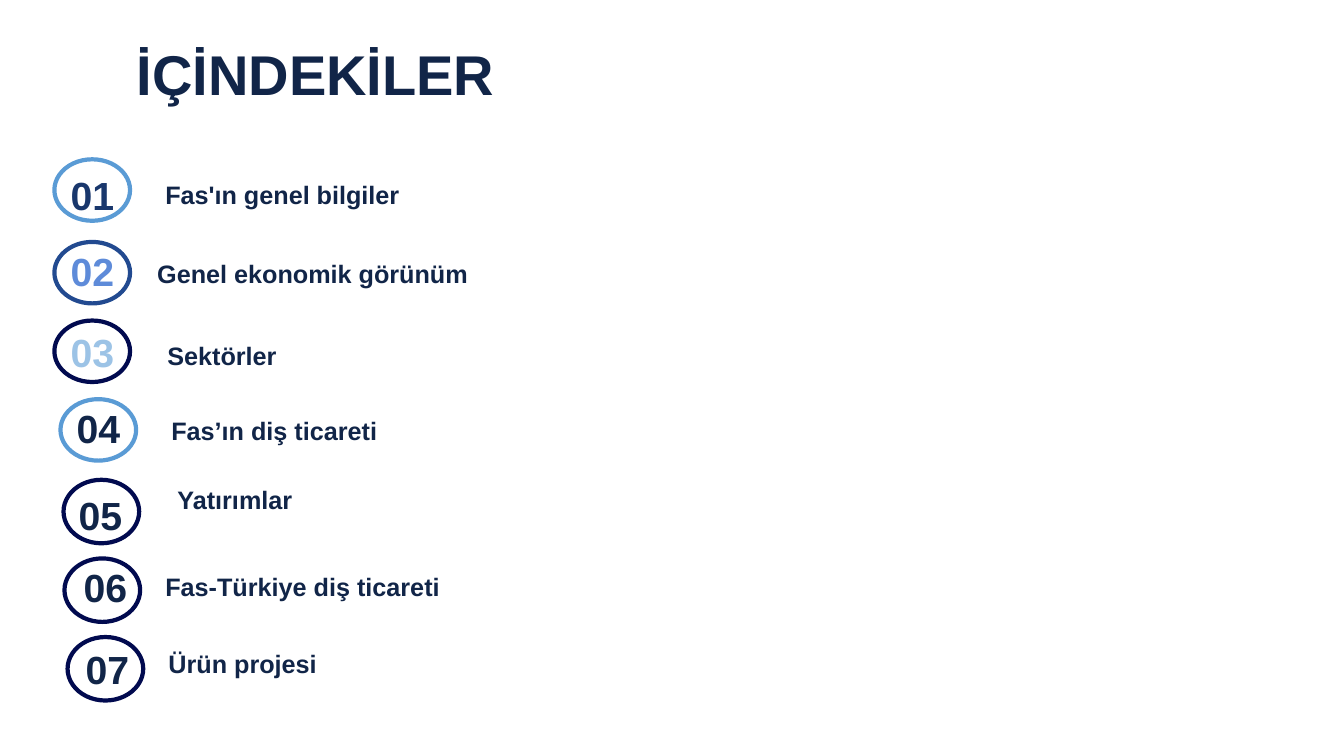
from dataclasses import dataclass

import pptx
import pptx.dml.color
import pptx.enum.shapes
import pptx.enum.text
import pptx.util

SLIDE_WIDTH = pptx.util.Inches(13.33)
SLIDE_HEIGHT = pptx.util.Inches(7.5)
FONT = "Arial"
NAVY = "112548"
SKY = "5A9BD5"
MIDNIGHT = "010A4F"
LEFT = pptx.enum.text.PP_ALIGN.LEFT
CENTER = pptx.enum.text.PP_ALIGN.CENTER
TOP = pptx.enum.text.MSO_ANCHOR.TOP
MIDDLE = pptx.enum.text.MSO_ANCHOR.MIDDLE


@dataclass(frozen=True)
class Area:
    """Left, top, width and height in percent of the slide."""
    left: float
    top: float
    width: float
    height: float

    def lengths(self) -> tuple[int, int, int, int]:
        return (
            int(SLIDE_WIDTH * self.left / 100),
            int(SLIDE_HEIGHT * self.top / 100),
            int(SLIDE_WIDTH * self.width / 100),
            int(SLIDE_HEIGHT * self.height / 100),
        )


@dataclass(frozen=True)
class Topic:
    title: str
    ring_at: tuple[float, float]
    number_at: tuple[float, float]
    title_at: tuple[float, float]
    ring_color: str = MIDNIGHT
    number_color: str = NAVY
    ring_height: float = 8.4
    number_height: float = 7.6
    title_width: float = 36.31


TOPICS = [
    Topic("Fas'ın genel bilgiler", (4.05, 21.07), (2.93, 22), (11.4, 23.07),
          SKY, "19376C", 8.13, 6.27),
    Topic("Genel ekonomik görünüm", (4.05, 32), (2.93, 32), (10.8, 33.47),
          "224A90", "5E8BD9", 8.13, 6.27),
    Topic("Sektörler", (4.05, 42.4), (2.93, 42.8), (11.55, 44.4),
          MIDNIGHT, "9CC3E6", 8.13, 6.27),
    Topic("Fas’ın diş ticareti", (4.5, 52.8), (3.38, 52.8), (11.85, 54.27),
          SKY, NAVY, 8.13, 6.27),
    Topic("Yatırımlar", (4.73, 63.47), (3.53, 64.4), (12.3, 63.47)),
    Topic("Fas-Türkiye diş ticareti", (4.8, 73.87), (3.9, 73.87), (11.4, 74.93)),
    Topic("Ürün projesi", (5.03, 84.27), (4.05, 84.67), (11.63, 85.07),
          title_width=30),
]


def rgb(color: str) -> pptx.dml.color.RGBColor:
    return pptx.dml.color.RGBColor.from_string(color)


def add_text(slide, text: str, area: Area, *, size: float, color: str = NAVY,
             align=LEFT, anchor=TOP, side_inset: float = 0.12) -> None:
    frame = slide.shapes.add_textbox(*area.lengths()).text_frame
    frame.word_wrap = True
    frame.auto_size = pptx.enum.text.MSO_AUTO_SIZE.SHAPE_TO_FIT_TEXT
    frame.vertical_anchor = anchor
    frame.margin_left = frame.margin_right = pptx.util.Inches(side_inset)
    frame.margin_top = frame.margin_bottom = pptx.util.Inches(0.05)
    paragraph = frame.paragraphs[0]
    paragraph.alignment = align
    run = paragraph.add_run()
    run.text = text
    run.font.name = FONT
    run.font.size = pptx.util.Pt(size)
    run.font.bold = True
    run.font.color.rgb = rgb(color)


def add_ring(slide, area: Area, color: str) -> None:
    ring = slide.shapes.add_shape(
        pptx.enum.shapes.MSO_SHAPE.OVAL, *area.lengths())
    ring.shadow.inherit = False
    ring.fill.background()
    ring.line.color.rgb = rgb(color)
    ring.line.width = pptx.util.Pt(3)


def add_topic(slide, number: int, topic: Topic) -> None:
    add_text(slide, topic.title, Area(*topic.title_at, topic.title_width, 5.33),
             size=18)
    add_text(slide, f"{number:02d}",
             Area(*topic.number_at, 7.88, topic.number_height),
             size=28, color=topic.number_color, align=CENTER)
    add_ring(slide, Area(*topic.ring_at, 5.63, topic.ring_height),
             topic.ring_color)


def main() -> None:
    presentation = pptx.Presentation()
    presentation.slide_width = SLIDE_WIDTH
    presentation.slide_height = SLIDE_HEIGHT
    contents = presentation.slides.add_slide(presentation.slide_layouts[6])
    add_text(contents, "İÇİNDEKİLER", Area(3.53, 4.53, 39.91, 10.27),
             size=40, align=CENTER, anchor=MIDDLE, side_inset=0.1)
    for number, topic in enumerate(TOPICS, start=1):
        add_topic(contents, number, topic)
    presentation.save("out.pptx")


if __name__ == "__main__":
    main()
